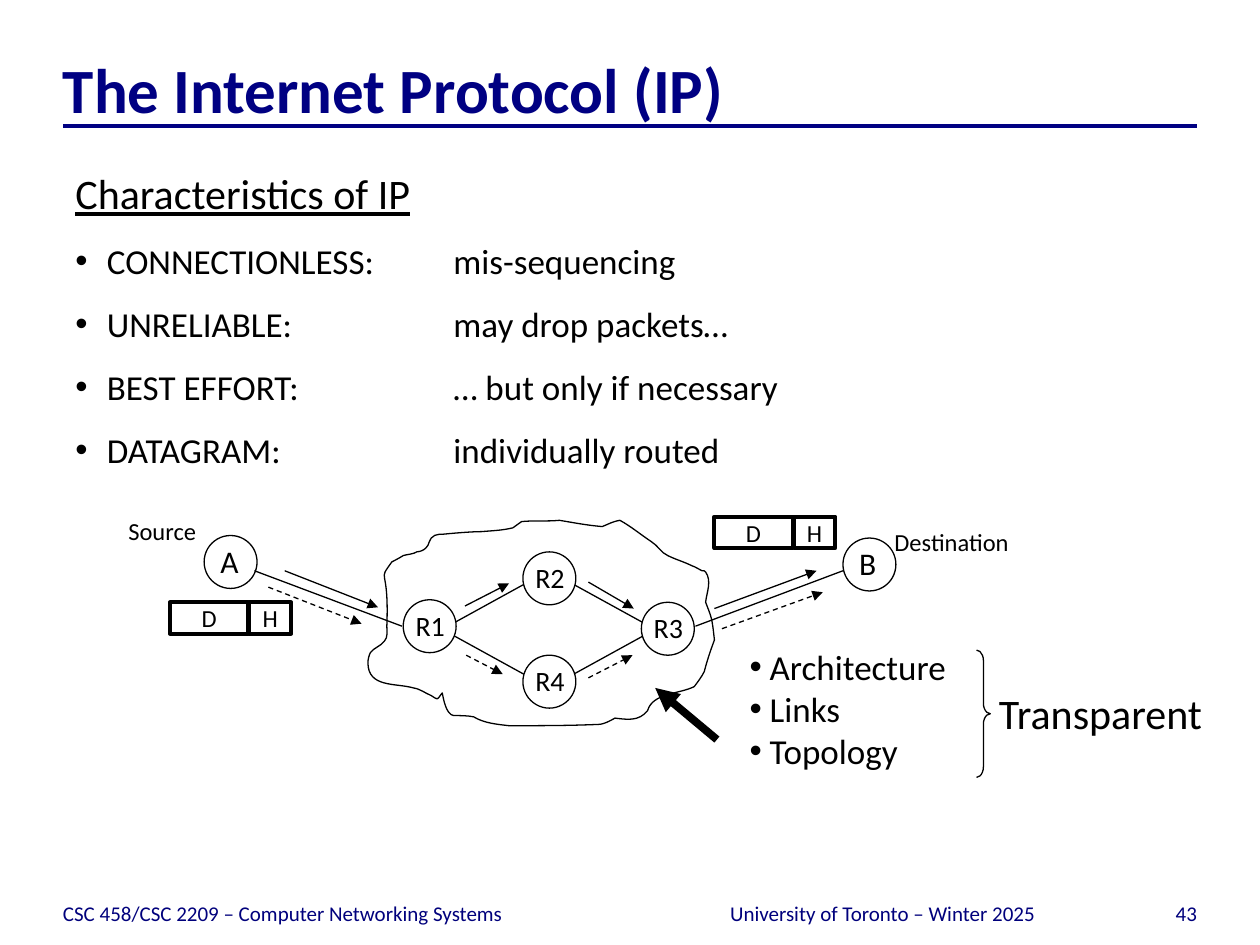
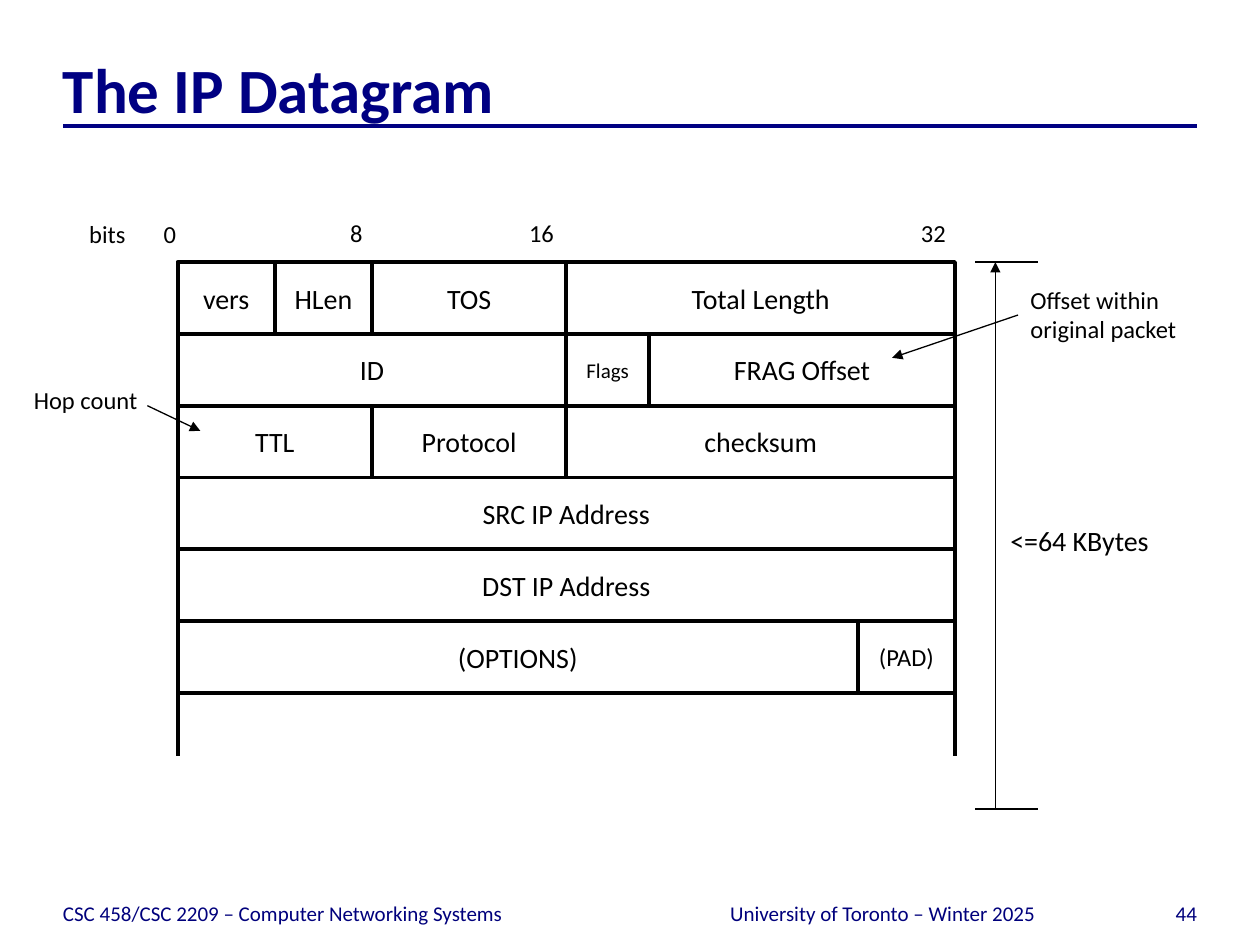
from itertools import accumulate

from lxml import etree
from pptx import Presentation
from pptx.dml.color import RGBColor
from pptx.enum.dml import MSO_LINE
from pptx.enum.shapes import MSO_CONNECTOR, MSO_SHAPE
from pptx.enum.text import MSO_ANCHOR, PP_ALIGN
from pptx.oxml.ns import qn
from pptx.util import Inches, Pt

TITLE_BLUE = RGBColor(0x00, 0x00, 0x82)
FOOTER_BLUE = RGBColor(0x00, 0x00, 0x7C)
BLACK = RGBColor(0x00, 0x00, 0x00)
WHITE = RGBColor(0xFF, 0xFF, 0xFF)
FONT = "Calibri"
THIN, THICK, HEAVY = 0.75, 2.25, 4.5

LEFT, CENTER, RIGHT = PP_ALIGN.LEFT, PP_ALIGN.CENTER, PP_ALIGN.RIGHT
TOP, MIDDLE, BOTTOM = MSO_ANCHOR.TOP, MSO_ANCHOR.MIDDLE, MSO_ANCHOR.BOTTOM
STRAIGHT, DASH = MSO_CONNECTOR.STRAIGHT, MSO_LINE.DASH
RECTANGLE, OVAL = MSO_SHAPE.RECTANGLE, MSO_SHAPE.OVAL
DIAMOND, BRACE = MSO_SHAPE.FLOWCHART_DECISION, MSO_SHAPE.RIGHT_BRACE

DEFAULT_INSETS = (0.1, 0.05, 0.1, 0.05)
NO_INSETS = (0, 0, 0, 0)

# Cubic curves in hundredths of an inch: two control points and an end point
CLOUD_START = (251, 150)
CLOUD_CURVES = [
    (252, 155, 254, 167, 260, 168), (266, 168, 271, 168, 276, 169),
    (284, 174, 295, 175, 304, 176), (328, 176, 351, 176, 375, 175),
    (380, 175, 388, 170, 388, 170), (397, 171, 407, 173, 414, 164),
    (418, 150, 439, 151, 451, 145), (454, 141, 457, 137, 459, 133),
    (461, 125, 464, 116, 467, 108), (465, 90, 465, 91, 460, 78),
    (461, 70, 465, 61, 460, 54), (460, 53, 458, 53, 457, 53),
    (455, 52, 452, 50, 449, 49), (443, 46, 436, 44, 430, 41),
    (425, 39, 422, 33, 417, 30), (408, 24, 401, 18, 392, 13),
    (386, 14, 383, 16, 378, 18), (366, 17, 356, 15, 344, 13),
    (334, 14, 324, 13, 314, 14), (311, 15, 310, 18, 307, 19),
    (298, 21, 294, 21, 282, 22), (272, 22, 252, 24, 252, 24),
    (250, 24, 247, 24, 245, 25), (240, 27, 241, 33, 238, 35),
    (236, 37, 233, 38, 231, 38), (228, 40, 223, 40, 220, 41),
    (217, 43, 211, 46, 211, 46), (199, 63, 209, 47, 207, 97),
    (207, 101, 208, 106, 205, 109), (202, 113, 197, 114, 194, 118),
    (193, 120, 192, 123, 192, 126), (192, 146, 214, 142, 228, 146),
    (234, 147, 237, 150, 242, 152), (244, 153, 247, 156, 248, 154),
    (249, 153, 250, 151, 251, 150),
]


def write_para(para, text, size, color=BLACK, align=LEFT, **extra):
    para.alignment = align
    span = para.add_run()
    span.text = text
    formats = {"name": FONT, "size": Pt(size), **extra}
    for name, value in formats.items():
        setattr(span.font, name, value)
    span.font.color.rgb = color


def prepare_frame(shape, anchor, insets):
    frame = shape.text_frame
    sides = ("margin_left", "margin_top", "margin_right", "margin_bottom")
    formats = {"word_wrap": True, "vertical_anchor": anchor,
               **{side: Inches(inset) for side, inset in zip(sides, insets)}}
    for name, value in formats.items():
        setattr(frame, name, value)
    return frame


def add_frame(page, box, anchor=TOP, insets=DEFAULT_INSETS):
    return prepare_frame(page.shapes.add_textbox(*map(Inches, box)), anchor, insets)


def add_label(page, box, text, size, anchor=TOP, insets=DEFAULT_INSETS, **formats):
    para = add_frame(page, box, anchor, insets).paragraphs[0]
    write_para(para, text, size, **formats)
    return para


def style_outline(shape, weight=THIN, fill=None):
    shape.shadow.inherit = False
    if fill is None:
        shape.fill.background()
    else:
        shape.fill.solid()
        shape.fill.fore_color.rgb = fill
    shape.line.color.rgb = BLACK
    shape.line.width = Pt(weight)


def add_outline(page, kind, box, text="", size=16, weight=THIN, fill=None):
    """Draw a preset shape with a black outline and centred text."""
    shape = page.shapes.add_shape(kind, *map(Inches, box))
    style_outline(shape, weight, fill)
    if text:
        frame = prepare_frame(shape, MIDDLE, NO_INSETS)
        write_para(frame.paragraphs[0], text, size, align=CENTER)
    return shape


def add_line(page, start, end, weight=THIN, color=BLACK, arrow=False, dash=None):
    line = page.shapes.add_connector(STRAIGHT, *map(Inches, (*start, *end)))
    line.line.color.rgb = color
    line.line.width = Pt(weight)
    if dash is not None:
        line.line.dash_style = dash
    if arrow:
        etree.SubElement(line.line._get_or_add_ln(), qn("a:tailEnd"), type="triangle")
    etree.SubElement(line._element.spPr, qn("a:effectLst"))


def set_tab(para, position):
    tabs = etree.SubElement(para._p.get_or_add_pPr(), qn("a:tabLst"))
    etree.SubElement(tabs, qn("a:tab"), pos=str(Inches(position)), algn="l")


def set_bullet(para, hang):
    props = para._p.get_or_add_pPr()
    props.set("marL", str(Inches(hang)))
    props.set("indent", str(-Inches(hang)))
    etree.SubElement(props, qn("a:buFont"), typeface="Arial")
    etree.SubElement(props, qn("a:buChar"), char="•")


def add_page(deck, title, number):
    """Add a slide with the shared title, rule and footers."""
    page = deck.slides.add_slide(deck.slide_layouts[6])
    add_line(page, (0.5, 1), (9.5, 1), THICK, TITLE_BLUE)
    add_label(page, (0.5, 0.33, 9, 0.67), title, 36, BOTTOM, (0, 0.05, 0, 0),
              color=TITLE_BLUE, bold=True)
    footers = [
        (0.5, 4.83, "CSC 458/CSC 2209 – Computer Networking Systems", LEFT),
        (8.67, 0.83, str(number), RIGHT),
        (5.42, 3.17, "University of Toronto – Winter 2025", CENTER),
    ]
    for left, width, text, align in footers:
        add_label(page, (left, 6.95, width, 0.4), text, 12, BOTTOM, NO_INSETS,
                  color=FOOTER_BLUE, align=align)
    return page


def add_characteristics(page, box):
    frame = add_frame(page, box)
    heading = frame.paragraphs[0]
    write_para(heading, "Characteristics of IP", 24, underline=True)
    heading.space_after = Pt(0.5)
    for trait, meaning in [
        ("CONNECTIONLESS:", "mis-sequencing"),
        ("UNRELIABLE:", "may drop packets…"),
        ("BEST EFFORT:", "… but only if necessary"),
        ("DATAGRAM:", "individually routed"),
    ]:
        para = frame.add_paragraph()
        write_para(para, f"{trait}\t{meaning}", 20)
        set_bullet(para, 0.25)
        set_tab(para, 3)
    for para in frame.paragraphs:
        para.line_spacing = 1.5


def add_cloud(page, left, top):
    """Draw the closed cloud, turning each straight segment into its curve."""
    builder = page.shapes.build_freeform(*CLOUD_START, scale=Inches(0.01))
    ends = [curve[4:] for curve in CLOUD_CURVES]
    builder.add_line_segments(ends, close=True)
    cloud = builder.convert_to_shape(Inches(left), Inches(top))
    style_outline(cloud)
    min_x, min_y = map(min, zip(*ends))
    segments = list(cloud._element.iter(qn("a:lnTo")))
    for segment, curve in zip(segments, CLOUD_CURVES):
        bezier = etree.Element(qn("a:cubicBezTo"))
        for x, y in zip(curve[::2], curve[1::2]):
            etree.SubElement(bezier, qn("a:pt"), x=str(x - min_x), y=str(y - min_y))
        segment.getparent().replace(segment, bezier)


def add_packet(page, left, top):
    for offset, width, text in [(0, 0.62, "D"), (0.63, 0.33, "H")]:
        add_outline(page, RECTANGLE, (left + offset, top, width, 0.25), text, 14, THICK)


def add_network(page, left, top):
    """Draw hosts, routers, links and packet routes from a top left corner."""
    def at(x, y):
        return left + x, top + y

    add_outline(page, DIAMOND, (*at(2.51, 0.53), 1.69, 0.93))
    hosts = [("A", 0.62, 0.25), ("B", 5.69, 0.27)]
    routers = [("R1", 2.2, 0.76), ("R2", 3.15, 0.38), ("R4", 3.15, 1.2), ("R3", 4.09, 0.78)]
    for nodes, size, shift, drop, width, fill in [
        (hosts, 18, 0.03, 0, 0.37, None), (routers, 16, 0, 0.02, 0.46, WHITE),
    ]:
        for name, x, y in nodes:
            add_outline(page, OVAL, (*at(x, y), 0.42, 0.42), fill=fill)
            add_label(page, (*at(x + shift, y + drop), width, 0.38), name, size)

    links = [(1.02, 0.53, 2.19, 0.97), (4.52, 0.97, 5.69, 0.53)]
    upper_route = [(1.26, 0.53, 2, 0.82), (2.69, 0.81, 3.04, 0.63),
                   (3.67, 0.62, 4.03, 0.83), (4.67, 0.83, 5.48, 0.53)]
    lower_route = [(1.13, 0.66, 1.87, 0.95), (2.7, 1.2, 2.99, 1.35),
                   (3.67, 1.38, 4.02, 1.2), (4.73, 0.99, 5.53, 0.7)]
    for lines, arrow, dash in [(links, False, None), (upper_route, True, None),
                               (lower_route, True, DASH)]:
        for x1, y1, x2, y2 in lines:
            add_line(page, at(x1, y1), at(x2, y2), arrow=arrow, dash=dash)

    add_label(page, (*at(-0.08, 0.05), 1.06, 0.33), "Source", 14)
    add_label(page, (*at(6, 0.13), 1.61, 0.33), "Destination", 14)
    add_cloud(page, left, top)
    add_packet(page, *at(0.35, 0.78))
    add_packet(page, *at(4.67, 0.1))
    add_line(page, at(4.69, 1.87), at(4.2, 1.46), HEAVY, arrow=True)


def add_transparency_note(page, left, top):
    frame = add_frame(page, (left, top, 1.91, 1.11))
    for index, text in enumerate(["Architecture", "Links", "Topology"]):
        para = frame.add_paragraph() if index else frame.paragraphs[0]
        write_para(para, text, 20)
        set_bullet(para, 0.16)
    brace = add_outline(page, BRACE, (left + 1.9, top + 0.09, 0.11, 1.01))
    brace.adjustments[0] = 0.755
    brace.adjustments[1] = 0.5
    add_label(page, (left + 1.98, top + 0.34, 1.92, 0.5), "Transparent", 24)


def add_header_fields(page, left, top, width, row_height):
    """Lay out the header rows, each field as wide as its share of 32 bits."""
    rows = [
        [("vers", 4, 16), ("HLen", 4, 16), ("TOS", 8, 16), ("Total Length", 16, 16)],
        [("ID", 16, 16), ("Flags", 3.4, 12), ("FRAG Offset", 12.6, 16)],
        [("TTL", 8, 16), ("Protocol", 8, 16), ("checksum", 16, 16)],
        [("SRC IP Address", 32, 16)],
        [("DST IP Address", 32, 16)],
        [("(OPTIONS)", 28, 16), ("(PAD)", 4, 14)],
    ]
    bit = width / 32
    for row, fields in enumerate(rows):
        starts = accumulate((bits for _, bits, _ in fields), initial=0)
        for start, (text, bits, size) in zip(starts, fields):
            box = (left + start * bit, top + row * row_height, bits * bit, row_height)
            add_outline(page, RECTANGLE, box, text, size, THICK)
    for x in (left, left + width):
        add_line(page, (x, top + 3.25), (x, top + 3.92), THICK)
    for text, offset, label_width in [("8", 1.27, 0.31), ("16", 2.69, 0.42),
                                      ("32", 5.8, 0.42)]:
        add_label(page, (left + offset, top - 0.4, label_width, 0.34), text, 14)
    origin = add_label(page, (left - 0.8, top - 0.39, 0.99, 0.34), "bits\t0", 14)
    set_tab(origin, 0.59)


def add_size_scale(page, left, top, height):
    middle, bottom = left + 0.16, top + height
    add_line(page, (middle, bottom), (middle, top), arrow=True)
    add_label(page, (left + 0.18, top + 1.92, 1.51, 0.57), "<=64 KBytes", 16, MIDDLE)
    for y in (top, bottom):
        add_line(page, (left, y), (left + 0.5, y))


def add_callout(page, box, text, start, end):
    """Add a note and an arrow, whose ends are measured from the note's corner."""
    left, top = box[:2]
    add_label(page, box, text, 14, MIDDLE)
    add_line(page, (left + start[0], top + start[1]), (left + end[0], top + end[1]),
             arrow=True)


def main():
    deck = Presentation()
    deck.slide_width, deck.slide_height = Inches(10), Inches(7.5)

    protocol = add_page(deck, "The Internet Protocol (IP)", 43)
    add_characteristics(protocol, (0.5, 1.08, 8.25, 2.7))
    add_network(protocol, 1, 4)
    add_transparency_note(protocol, 5.85, 5.07)

    datagram = add_page(deck, "The IP Datagram", 44)
    add_header_fields(datagram, 1.41, 2.08, 6.17, 0.57)
    add_size_scale(datagram, 7.74, 2.08, 4.34)
    add_callout(datagram, (8.08, 2.08, 1.75, 0.83), "Offset within original packet",
                (0, 0.42), (-1, 0.76))
    add_callout(datagram, (0.17, 2.92, 1.43, 0.5), "Hop count", (1, 0.3), (1.42, 0.5))

    deck.save("out.pptx")


if __name__ == "__main__":
    main()
